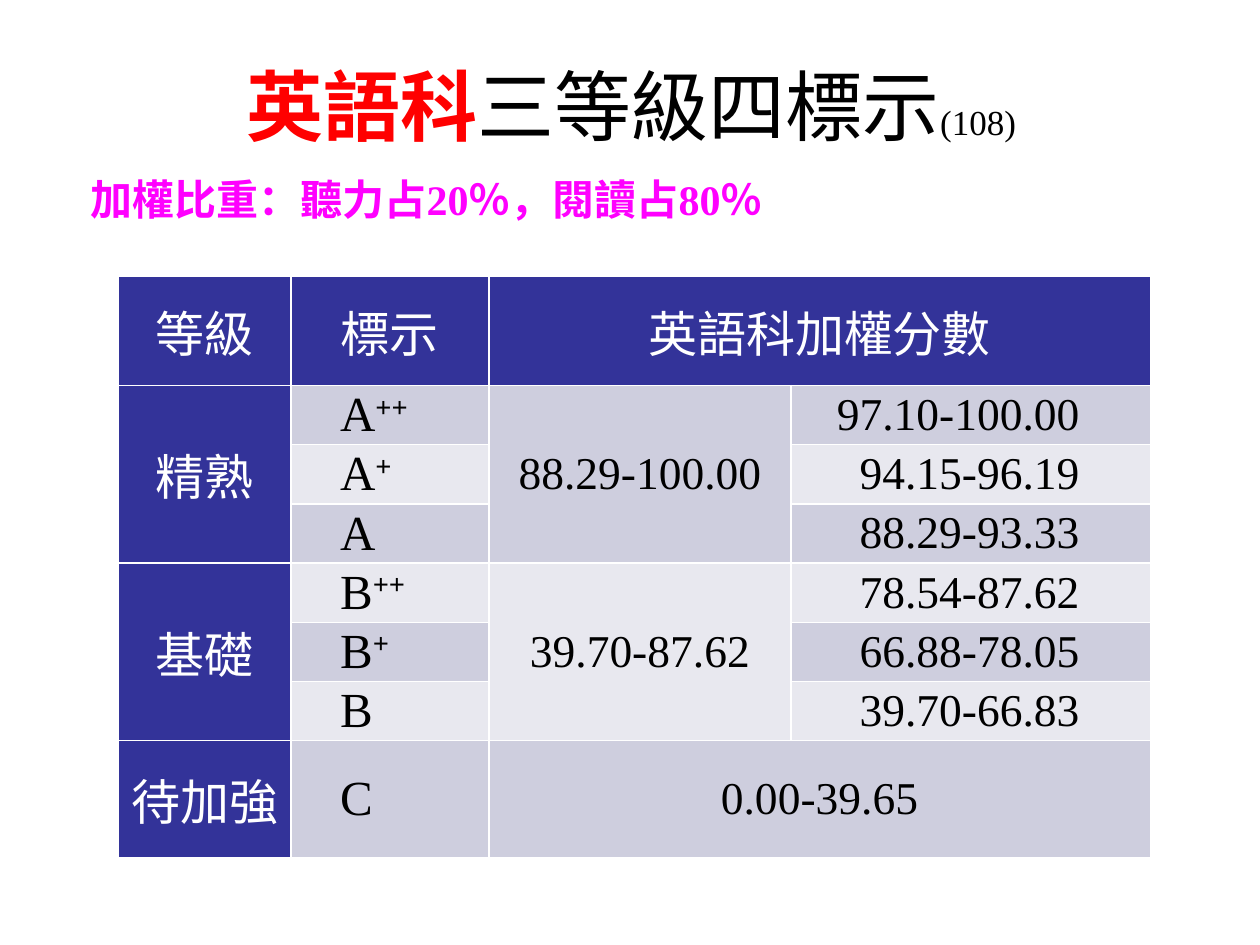
from lxml.etree import SubElement
from pptx import Presentation
from pptx.dml.color import RGBColor
from pptx.enum.text import MSO_ANCHOR, MSO_AUTO_SIZE, PP_ALIGN
from pptx.oxml.ns import qn
from pptx.util import Inches, Pt

SERIF, SANS = "Times New Roman", "Arial"
CJK_SC, CJK_TC = "Noto Sans CJK SC", "Noto Sans CJK TC"
HEADER, BANDS = "333399", ("E8E8EF", "CECEDE")

TITLE = [
    ("英語科", dict(size=44, name=CJK_SC, color="FF0000", bold=True)),
    ("三等級四標示", dict(size=44, name=CJK_SC, bold=False)),
    ("(108)", dict(size=20, name=SERIF, bold=False)),
]
WEIGHTING = [
    ("加權比重：", dict(size=24, name=CJK_TC, color="FF00FF", bold=True)),
    ("聽力占20％，閱讀占80％", dict(size=24, name=SERIF, color="FF00FF", bold=True)),
]
ROWS = [
    ("等級", "標示", "英語科加權分數", ""),
    ("精熟", "A++", "88.29-100.00", "97.10-100.00"),
    ("", "A+", "", "94.15-96.19"),
    ("", "A", "", "88.29-93.33"),
    ("基礎", "B++", "39.70-87.62", "78.54-87.62"),
    ("", "B+", "", "66.88-78.05"),
    ("", "B", "", "39.70-66.83"),
    ("待加強", "C", "0.00-39.65", ""),
]
MERGES = [((0, 2), (0, 3)), ((1, 0), (3, 0)), ((1, 2), (3, 2)),
          ((4, 0), (6, 0)), ((4, 2), (6, 2)), ((7, 2), (7, 3))]
COLUMN_WIDTHS = (1.37, 1.57, 2.4, 2.85)
ROW_HEIGHTS = (0.87,) + (0.47,) * 6 + (0.93,)
LABEL_INDENT, SCORE_INDENT = 0.39, 0.56


def rgb(value):
    return RGBColor.from_string(value)


def add_span(para, text, size, name, color="000000", bold=None, raised=False):
    span = para.add_run()
    span.text = text
    for key, value in dict(size=Pt(size), name=name, bold=bold).items():
        setattr(span.font, key, value)
    span.font.color.rgb = rgb(color)
    east_asian = name if name in (CJK_SC, CJK_TC) else CJK_TC
    properties = span.font._element
    SubElement(properties, qn("a:ea")).set("typeface", east_asian)
    if raised:
        properties.set("baseline", "30000")


def place(shape, left, top, width, height):
    for key, value in dict(left=left, top=top, width=width, height=height).items():
        setattr(shape, key, Inches(value))


def add_borders(cell, color="FFFFFF", points=1):
    properties = cell._tc.get_or_add_tcPr()
    for side in "LRTB":
        line = SubElement(properties, qn(f"a:ln{side}"), w=str(Pt(points)))
        fill = SubElement(line, qn("a:solidFill"))
        SubElement(fill, qn("a:srgbClr"), val=color)


def format_cell(cell, row, column, text):
    is_header = row == 0 or column == 0
    is_label = column == 1 and not is_header
    is_score = column == 3 and not is_header
    add_borders(cell)
    cell.fill.solid()
    cell.fill.fore_color.rgb = rgb(HEADER if is_header else BANDS[row % 2])
    layout = dict(
        vertical_anchor=MSO_ANCHOR.MIDDLE, margin_top=0, margin_bottom=0,
        margin_left=Inches(LABEL_INDENT if is_label else 0.02),
        margin_right=Inches(SCORE_INDENT if is_score else 0.02))
    for key, value in layout.items():
        setattr(cell, key, value)
    if not text:
        return
    para = cell.text_frame.paragraphs[0]
    para.alignment = (PP_ALIGN.LEFT if is_label else
                      PP_ALIGN.RIGHT if is_score else PP_ALIGN.CENTER)
    if is_header:
        add_span(para, text, 28, SANS, "FFFFFF", bold=False)
    elif is_label:
        add_span(para, text[0], 28, SERIF)
        if text[1:]:
            add_span(para, text[1:], 28, SERIF, bold=True, raised=True)
    else:
        add_span(para, text, 26, SERIF)


def main():
    deck = Presentation()
    deck.slide_width, deck.slide_height = Inches(10), Inches(7.5)
    page = deck.slides.add_slide(deck.slide_layouts[5])

    title = page.shapes.title
    place(title, 0.51, 0.21, 9, 1.25)
    title.text_frame.vertical_anchor = MSO_ANCHOR.MIDDLE
    heading = title.text_frame.paragraphs[0]
    heading.alignment = PP_ALIGN.CENTER
    for text, style in TITLE:
        add_span(heading, text, **style)

    frame = page.shapes.add_table(len(ROWS), len(COLUMN_WIDTHS), 0, 0, 0, 0)
    place(frame, 0.94, 2.19, sum(COLUMN_WIDTHS), sum(ROW_HEIGHTS))
    table = frame.table
    for column, width in zip(table.columns, COLUMN_WIDTHS):
        column.width = Inches(width)
    for row, height in zip(table.rows, ROW_HEIGHTS):
        row.height = Inches(height)
    for first, last in MERGES:
        table.cell(*first).merge(table.cell(*last))
    for row, texts in enumerate(ROWS):
        for column, text in enumerate(texts):
            format_cell(table.cell(row, column), row, column, text)

    box = page.shapes.add_textbox(0, 0, 0, 0)
    box.text_frame.word_wrap = True
    box.text_frame.auto_size = MSO_AUTO_SIZE.SHAPE_TO_FIT_TEXT
    place(box, 0.62, 1.33, 5.59, 0.5)
    for text, style in WEIGHTING:
        add_span(box.text_frame.paragraphs[0], text, **style)

    deck.save("out.pptx")


if __name__ == "__main__":
    main()
